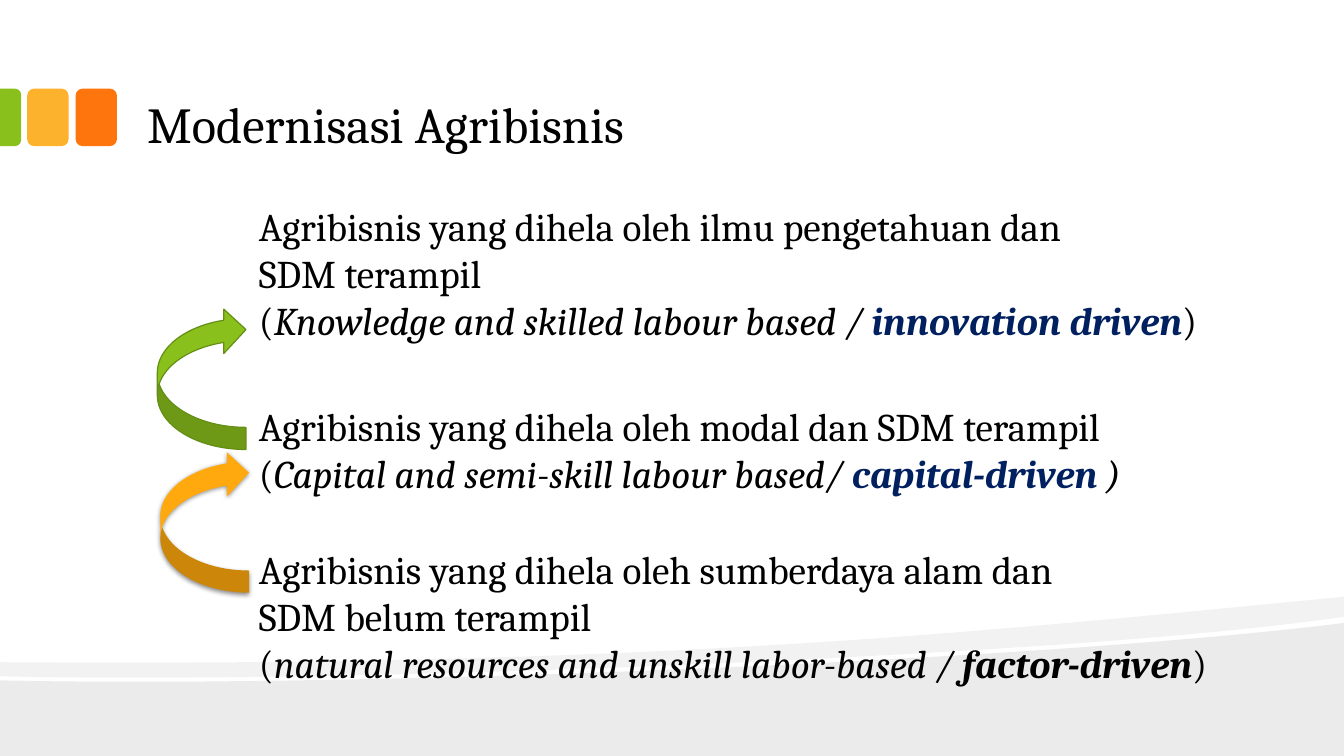
from lxml.etree import SubElement
from pptx import Presentation
from pptx.dml.color import RGBColor
from pptx.enum.shapes import MSO_SHAPE as Shape
from pptx.enum.text import MSO_ANCHOR as Anchor
from pptx.oxml.ns import qn
from pptx.util import Inches, Pt

FONT = "Cambria"
COLORS = {
    "black": "000000", "navy": "002060", "green": "89C01C", "moss": "658E15",
    "amber": "FFA90E", "yellow": "FCB22C", "orange": "FE750E",
}
STEPS = 24

# Each stage: top, height, plain lines, italic part, bold part, bold colour, italic end
STAGES = [
    (5.36, 1.51, ["Agribisnis yang dihela oleh sumberdaya alam dan", "SDM belum terampil"],
     "natural resources and unskill labor-based / ", "factor-driven", "black", False),
    (3.94, 1.04, ["Agribisnis yang dihela oleh modal dan SDM terampil"],
     "Capital and semi-skill labour based/ ", "capital-driven ", "navy", True),
    (1.96, 1.51, ["Agribisnis yang dihela oleh ilmu pengetahuan dan", "SDM terampil"],
     "Knowledge and skilled labour based / ", "innovation driven", "navy", False),
]


def rgb(name):
    return RGBColor.from_string(COLORS[name])


def paint(shape, fill):
    shape.shadow.inherit = False
    shape.fill.solid()
    shape.fill.fore_color.rgb = rgb(fill)
    shape.line.fill.background()


def curve(a, b, c, d):
    """Points along the cubic Bezier curve from a to d."""
    pts = []
    for i in range(STEPS + 1):
        t = i / STEPS
        u = 1 - t
        pts.append(tuple(u**3 * p + 3 * u * u * t * q + 3 * u * t * t * r + t**3 * s
                         for p, q, r, s in zip(a, b, c, d)))
    return pts


def add_wave(slide, points, alpha):
    pts = [(Inches(x), Inches(y)) for x, y in points]
    maker = slide.shapes.build_freeform(*pts[0])
    maker.add_line_segments(pts[1:], close=True)
    wave = maker.convert_to_shape()
    paint(wave, "black")
    color = wave._element.spPr.find(qn("a:solidFill")).find(qn("a:srgbClr"))
    SubElement(color, qn("a:alpha"), val=str(alpha * 1000))


def add_shape(slide, kind, box, fill):
    shape = slide.shapes.add_shape(kind, *map(Inches, box))
    paint(shape, fill)
    return shape


def add_arrow(slide, left, top, fill):
    arrow = add_shape(slide, Shape.CURVED_RIGHT_ARROW, (left, top, 0.88, 1.41), fill)
    arrow._element.spPr.find(qn("a:xfrm")).set("flipV", "1")
    return arrow


def add_shadow(shape):
    effects = shape._element.spPr.find(qn("a:effectLst"))
    outer = SubElement(effects, qn("a:outerShdw"), blurRad=str(Pt(3.5)),
                       dist=str(Pt(1.1)), dir="5400000", rotWithShape="0")
    color = SubElement(outer, qn("a:srgbClr"), val=COLORS["black"])
    SubElement(color, qn("a:alpha"), val="45000")


def add_box(slide, box):
    frame = slide.shapes.add_textbox(*map(Inches, box)).text_frame
    frame.word_wrap = True
    return frame


def set_font(para, size):
    para.font.name = FONT
    para.font.size = Pt(size)
    para.font.color.rgb = rgb("black")


def add_title(slide, text):
    frame = add_box(slide, (1.33, 0.17, 10.67, 1.42))
    frame.vertical_anchor = Anchor.BOTTOM
    frame.margin_left = frame.margin_right = Inches(0.13)
    frame.margin_top = frame.margin_bottom = Inches(0.07)
    para = frame.paragraphs[0]
    para.text = text
    set_font(para, 36)


def add_stage(slide, top, height, lines, basis, driver, color, slant):
    frame = add_box(slide, (2.47, top, 10.25, height))
    frame.text = "\n".join(lines)
    last = frame.add_paragraph()
    for text, italic, bold in [("(", False, False), (basis, True, False),
                               (driver, True, True), (")", slant, False)]:
        run = last.add_run()
        run.text = text
        run.font.italic = italic
        run.font.bold = bold
        if bold:
            run.font.color.rgb = rgb(color)
    for para in frame.paragraphs:
        set_font(para, 28)


def add_decor(slide):
    hill = curve((0, 6.75), (3.52, 6.83), (10.42, 6.55), (13.33, 6.18))
    add_wave(slide, hill + [(13.33, 7.5), (0, 7.5)], 8)
    lower = (curve((13.33, 6.12), (12.56, 6.23), (11.49, 6.33), (10.29, 6.41))
             + curve((10.29, 6.41), (6.98, 6.63), (2.58, 6.77), (0, 6.71))[1:])
    upper = curve((0, 6.57), (6.52, 6.62), (9.71, 6.27), (13.33, 5.92))
    add_wave(slide, lower + upper, 5)
    for left, fill in [(0.75, "orange"), (0.27, "yellow")]:
        add_shape(slide, Shape.ROUNDED_RECTANGLE, (left, 0.88, 0.41, 0.57), fill)
    tab = add_shape(slide, Shape.ROUND_2_SAME_RECTANGLE, (-0.18, 1.06, 0.57, 0.21), "green")
    tab.rotation = 90
    tab.adjustments[0] = 0.29


def main():
    prs = Presentation()
    prs.slide_width, prs.slide_height = Inches(13.33), Inches(7.5)
    slide = prs.slides.add_slide(prs.slide_layouts[6])
    add_decor(slide)
    add_title(slide, "Modernisasi Agribisnis")
    for stage in STAGES:
        add_stage(slide, *stage)
    add_shadow(add_arrow(slide, 1.59, 4.47, "amber"))
    rise = add_arrow(slide, 1.56, 3.05, "green")
    rise.line.color.rgb = rgb("moss")
    rise.line.width = Pt(0.85)
    prs.save("out.pptx")


if __name__ == "__main__":
    main()
